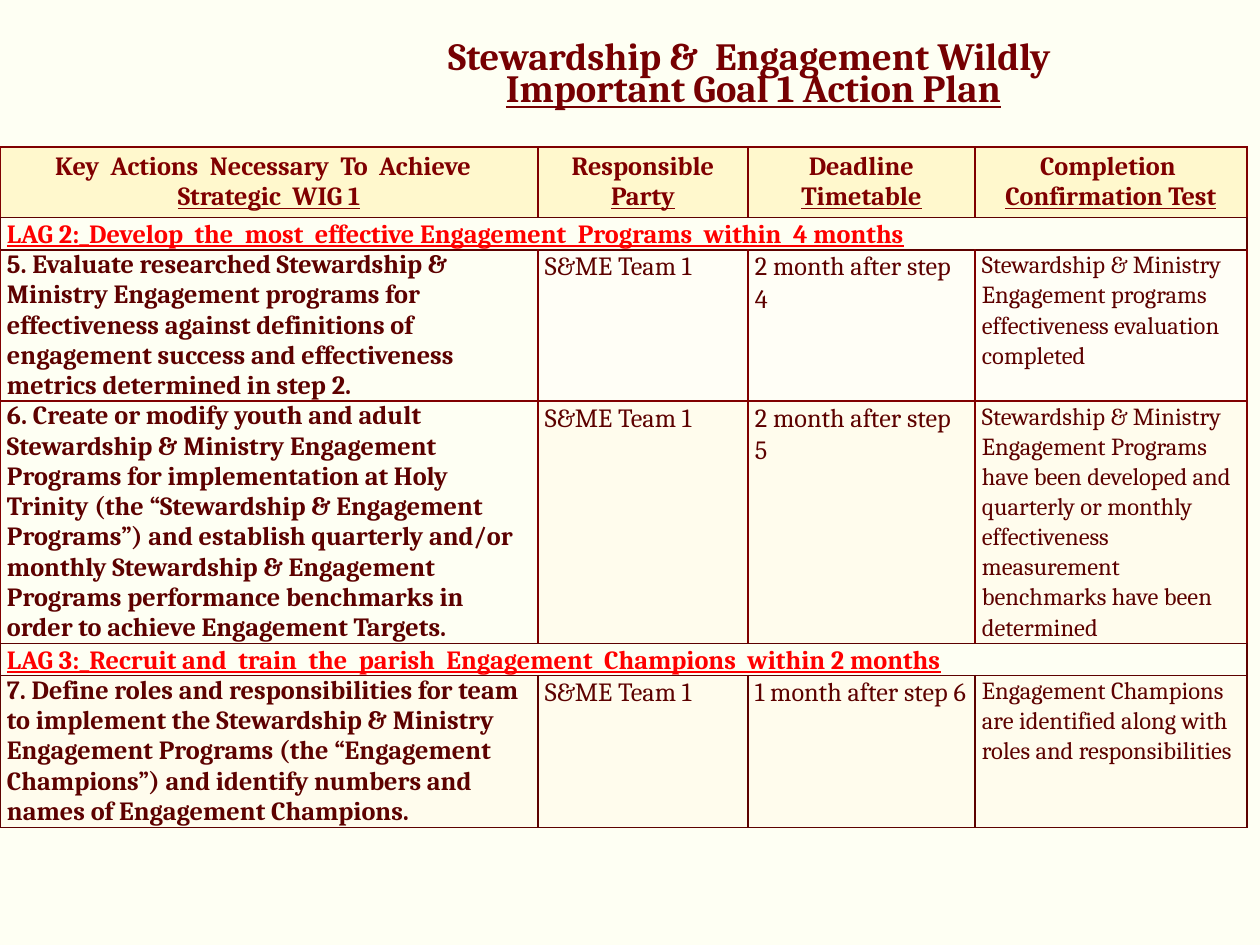
from lxml import etree
from pptx import Presentation
from pptx.dml.color import RGBColor
from pptx.enum.text import MSO_ANCHOR, PP_ALIGN
from pptx.oxml.ns import qn
from pptx.util import Pt

CENTER = PP_ALIGN.CENTER
LEFT = PP_ALIGN.LEFT
MIDDLE = MSO_ANCHOR.MIDDLE
PX = 914400 // 126

THEME = {
    "font": "Cambria",
    "page": "FEFFF3", "title": "760002", "header": "800000", "lag": "FF0000", "body": "5D0100",
    "header_fill": "FFF8CD", "pale_fill": "FFFEF6", "cream_fill": "FFFCED",
    "title_size": 22, "table_size": 15, "test_size": 14,
}


def style(paragraph, color, size, bold, align=LEFT, spacing=None):
    font = paragraph.font
    font.name, font.size, font.bold = THEME["font"], Pt(size), bold
    font.color.rgb = RGBColor.from_string(THEME[color])
    paragraph.alignment = align
    if spacing:
        paragraph.line_spacing = spacing


def format_cell(cell, fill, borders, margin_x, margin_y):
    cell.margin_left = cell.margin_right = margin_x * PX
    cell.margin_top = cell.margin_bottom = margin_y * PX
    properties = cell._tc.get_or_add_tcPr()
    for side, color in zip(("lnL", "lnR", "lnT", "lnB"), borders):
        line = etree.SubElement(properties, qn(f"a:{side}"), w=str(Pt(1)))
        solid = etree.SubElement(line, qn("a:solidFill"))
        etree.SubElement(solid, qn("a:srgbClr"), val=THEME[color])
    if fill:
        cell.fill.solid()
        cell.fill.fore_color.rgb = RGBColor.from_string(THEME[fill])
    else:
        cell.fill.background()


prs = Presentation()
prs.slide_width, prs.slide_height = 1260 * PX, 945 * PX
slide = prs.slides.add_slide(prs.slide_layouts[6])
slide.background.fill.solid()
slide.background.fill.fore_color.rgb = RGBColor.from_string(THEME["page"])

# Action plan table
column_widths = [538, 210, 227, 272]
row_heights = [70, 32, 151, 242, 32, 152]
plan = slide.shapes.add_table(len(row_heights), len(column_widths), 0, 147 * PX,
                              sum(column_widths) * PX, sum(row_heights) * PX).table
plan.first_row = plan.horz_banding = False
for column, width in zip(plan.columns, column_widths):
    column.width = width * PX
for row, height in zip(plan.rows, row_heights):
    row.height = height * PX

# Column headings: paragraphs of (text, underlined) runs
headings = [
    [[("Key  Actions  Necessary  To  Achieve  ", False)], [("Strategic  WIG 1", True)]],
    [[("Responsible ", False), ("Party", True)]],
    [[("Deadline", False), (" Timetable", True)]],
    [[("Completion ", False)], [("Confirmation Test", True)]],
]
for col, heading in enumerate(headings):
    cell = plan.cell(0, col)
    format_cell(cell, "header_fill", ["header"] * 3 + ["body"], 9, 5)
    for i, runs in enumerate(heading):
        paragraph = cell.text_frame.add_paragraph() if i else cell.text_frame.paragraphs[0]
        style(paragraph, "header", THEME["table_size"], True, CENTER)
        for text, underlined in runs:
            run = paragraph.add_run()
            run.text, run.font.underline = text, underlined

# LAG measures across the full width
lags = {
    1: "LAG 2:_Develop  the  most  effective Engagement  Programs  within  4 months",
    4: "LAG 3:_Recruit and  train  the  parish  Engagement  Champions  within 2 months",
}
for row, lag in lags.items():
    cell = plan.cell(row, 0)
    cell.merge(plan.cell(row, 3))
    for col in range(4):
        format_cell(plan.cell(row, col), None, ["body"] * 4, 7, 0)
    cell.text = lag
    paragraph = cell.text_frame.paragraphs[0]
    style(paragraph, "lag", THEME["table_size"], True, spacing=1.07)
    paragraph.font.underline = True

# Action steps: row, fill of the action, fill of the rest, borders, texts
steps = [
    (2, None, "pale_fill", ["header", "header", "body", "header"], [
        "5. Evaluate researched Stewardship & Ministry Engagement programs for effectiveness "
        "against definitions of engagement success and effectiveness metrics determined in step 2.",
        "S&ME Team 1", "2 month after step 4",
        "Stewardship & Ministry Engagement programs effectiveness evaluation completed"]),
    (3, None, "cream_fill", ["header"] * 4, [
        "6. Create or modify youth and adult Stewardship & Ministry Engagement Programs for "
        "implementation at Holy Trinity (the “Stewardship & Engagement Programs”) and establish "
        "quarterly and/or monthly Stewardship & Engagement Programs performance benchmarks in "
        "order to achieve Engagement Targets.",
        "S&ME Team 1", "2 month after step 5",
        "Stewardship & Ministry Engagement Programs have been developed and quarterly or monthly "
        "effectiveness measurement benchmarks have been determined"]),
    (5, "cream_fill", "cream_fill", ["body"] * 4, [
        "7. Define roles and responsibilities for team to implement the Stewardship & Ministry "
        "Engagement Programs (the “Engagement Champions”) and identify numbers and names of "
        "Engagement Champions.",
        "S&ME Team 1", "1 month after step 6",
        "Engagement Champions are identified along with roles and responsibilities"]),
]
for row, action_fill, detail_fill, borders, texts in steps:
    for col, text in enumerate(texts):
        is_action = col == 0
        cell = plan.cell(row, col)
        format_cell(cell, action_fill if is_action else detail_fill, borders, 7, 0)
        cell.text = text
        size = THEME["test_size" if col == 3 else "table_size"]
        style(cell.text_frame.paragraphs[0], "body", size, is_action,
              spacing=None if is_action else 1.07)

# Title
title = slide.shapes.add_textbox(388 * PX, 18 * PX, 731 * PX, 118 * PX).text_frame
title.word_wrap = True
title.vertical_anchor = MIDDLE
paragraph = title.paragraphs[0]
style(paragraph, "title", THEME["title_size"], True, CENTER, 0.7)
for text, underlined in [("Stewardship &  Engagement Wildly  ", False),
                         ("Important Goal 1 Action Plan", True)]:
    run = paragraph.add_run()
    run.text, run.font.underline = text, underlined

prs.save("out.pptx")
